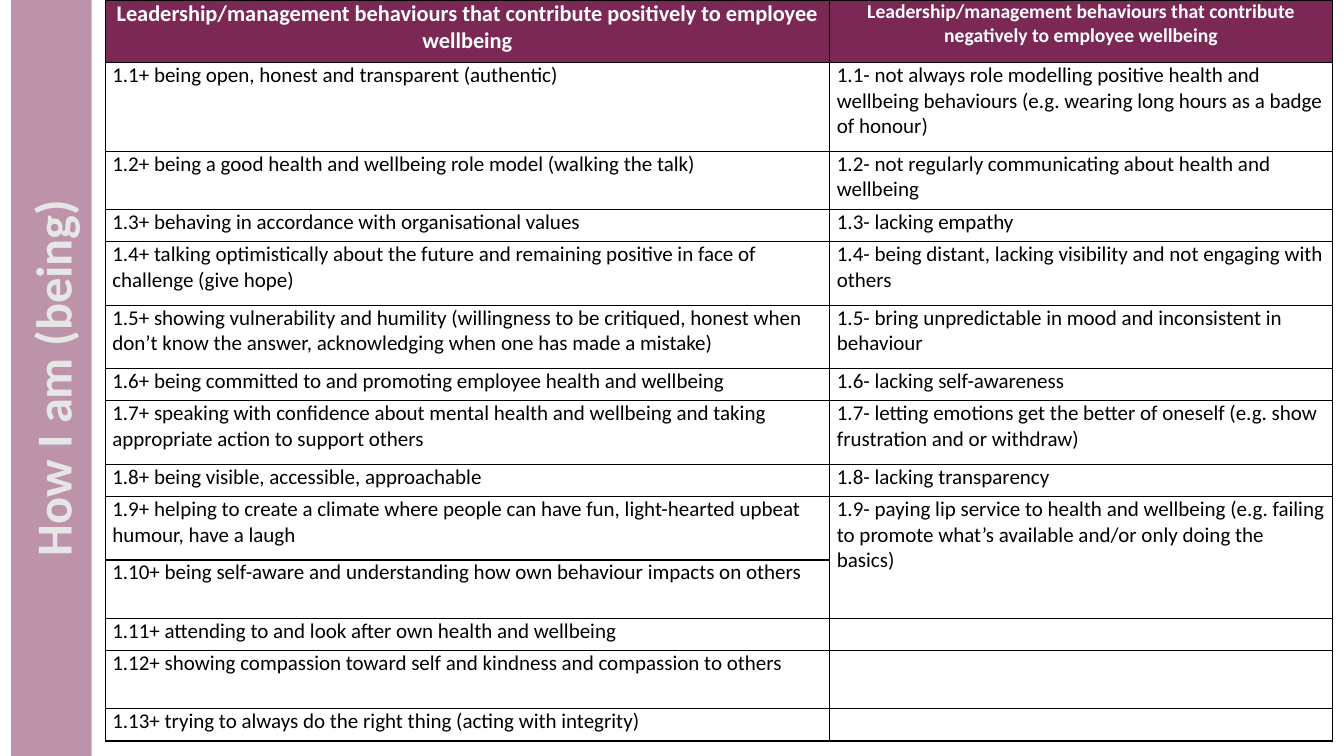
from dataclasses import dataclass

from lxml import etree
from pptx import Presentation
from pptx.dml.color import RGBColor
from pptx.enum.text import MSO_ANCHOR, MSO_AUTO_SIZE, PP_ALIGN
from pptx.oxml.ns import qn
from pptx.util import Cm, Pt

MIDDLE = MSO_ANCHOR.MIDDLE
NO_FIT = MSO_AUTO_SIZE.NONE
LEFT, CENTER = PP_ALIGN.LEFT, PP_ALIGN.CENTER
TITLE_ONLY = 5


@dataclass(frozen=True)
class Theme:
    font: str = "Calibri"
    plum: RGBColor = RGBColor(0x7C, 0x28, 0x55)
    pale: RGBColor = RGBColor(0xE7, 0xE6, 0xE6)
    white: RGBColor = RGBColor(0xFF, 0xFF, 0xFF)
    black: RGBColor = RGBColor(0, 0, 0)
    title: int = 36
    heads: tuple = (16, 14)
    body: int = 15
    rule: int = 1


THEME = Theme()

COLS = (18.26, 12.67)
HEAD = 1.57
ONE, TWO, TALL, THREE = 0.81, 1.47, 1.6, 2.24
HEADS = (
    "Leadership/management behaviours that contribute positively to employee wellbeing",
    "Leadership/management behaviours that contribute negatively to employee wellbeing",
)
# Row height, positive behaviour, negative behaviour; None joins the cell above
ROWS = (
    (THREE, "being open, honest and transparent (authentic)",
     "not always role modelling positive health and wellbeing behaviours "
     "(e.g. wearing long hours as a badge of honour)"),
    (TWO, "being a good health and wellbeing role model (walking the talk)",
     "not regularly communicating about health and wellbeing"),
    (ONE, "behaving in accordance with organisational values", "lacking empathy"),
    (TALL, "talking optimistically about the future and remaining positive "
     "in face of challenge (give hope)",
     "being distant, lacking visibility and not engaging with others"),
    (TALL, "showing vulnerability and humility (willingness to be critiqued, honest "
     "when don’t know the answer, acknowledging when one has made a mistake)",
     "bring unpredictable in mood and inconsistent in behaviour"),
    (ONE, "being committed to and promoting employee health and wellbeing",
     "lacking self-awareness"),
    (TALL, "speaking with confidence about mental health and wellbeing and taking "
     "appropriate action to support others",
     "letting emotions get the better of oneself (e.g. show frustration and or withdraw)"),
    (ONE, "being visible, accessible, approachable", "lacking transparency"),
    (TALL, "helping to create a climate where people can have fun, "
     "light-hearted upbeat humour, have a laugh",
     "paying lip service to health and wellbeing (e.g. failing to promote "
     "what’s available and/or only doing the basics)"),
    (TWO, "being self-aware and understanding how own behaviour impacts on others", None),
    (ONE, "attending to and look after own health and wellbeing", ""),
    (TWO, "showing compassion toward self and kindness and compassion to others", ""),
    (ONE, "trying to always do the right thing (acting with integrity)", ""),
)


def style(para, size, color, bold, align):
    font = para.font
    font.name, font.size, font.bold = THEME.font, Pt(size), bold
    font.color.rgb = color
    para.alignment = align


def draw_banner(slide, left, top, width, height):
    """Turn the title upright inside the given tall box."""
    title = slide.shapes.title
    title.width, title.height = Cm(height), Cm(width)
    title.left = Cm(left + (width - height) / 2)
    title.top = Cm(top + (height - width) / 2)
    title.rotation = 270
    title.fill.solid()
    title.fill.fore_color.rgb = THEME.plum
    tint = title.fill._xPr.find(qn("a:solidFill"))[0]
    etree.SubElement(tint, qn("a:alpha"), val="50000")
    frame = title.text_frame
    frame.text = "How I am (being)"
    frame.auto_size = NO_FIT
    frame.vertical_anchor = MIDDLE
    style(frame.paragraphs[0], THEME.title, THEME.pale, True, CENTER)


def add_rules(cell):
    """Give all four sides of a cell a thin black line."""
    props = cell._tc.get_or_add_tcPr()
    for side in ("lnL", "lnR", "lnT", "lnB"):
        line = etree.SubElement(props, qn(f"a:{side}"), w=str(Pt(THEME.rule)))
        fill = etree.SubElement(line, qn("a:solidFill"))
        etree.SubElement(fill, qn("a:srgbClr"), val=str(THEME.black))


def fill_cell(cell, text, size, head=False):
    add_rules(cell)
    cell.fill.solid()
    cell.fill.fore_color.rgb = THEME.plum if head else THEME.white
    cell.margin_left = cell.margin_right = Cm(0.18)
    cell.margin_top = cell.margin_bottom = 0
    cell.text = text
    style(cell.text_frame.paragraphs[0], size,
          THEME.white if head else THEME.black, head, CENTER if head else LEFT)


def draw_table(slide, left, top):
    heights = [HEAD] + [row[0] for row in ROWS]
    frame = slide.shapes.add_table(len(heights), len(COLS), Cm(left), Cm(top),
                                   Cm(sum(COLS)), Cm(sum(heights)))
    table = frame.table
    table.first_row = table.horz_banding = False
    for col, width in zip(table.columns, COLS):
        col.width = Cm(width)
    for row, height in zip(table.rows, heights):
        row.height = Cm(height)
    for col, (text, size) in enumerate(zip(HEADS, THEME.heads)):
        fill_cell(table.cell(0, col), text, size, head=True)
    for num, (_, *texts) in enumerate(ROWS, 1):
        for col, (text, sign) in enumerate(zip(texts, "+-")):
            cell = table.cell(num, col)
            fill_cell(cell, f"1.{num}{sign} {text}" if text else "", THEME.body)
            if text is None:
                table.cell(num - 1, col).merge(cell)


def main():
    deck = Presentation()
    deck.slide_width, deck.slide_height = Cm(33.87), Cm(19.05)
    slide = deck.slides.add_slide(deck.slide_layouts[TITLE_ONLY])
    draw_banner(slide, 0.28, 0, 2.03, 19.05)
    draw_table(slide, 2.65, 0)
    deck.save("out.pptx")


if __name__ == "__main__":
    main()
